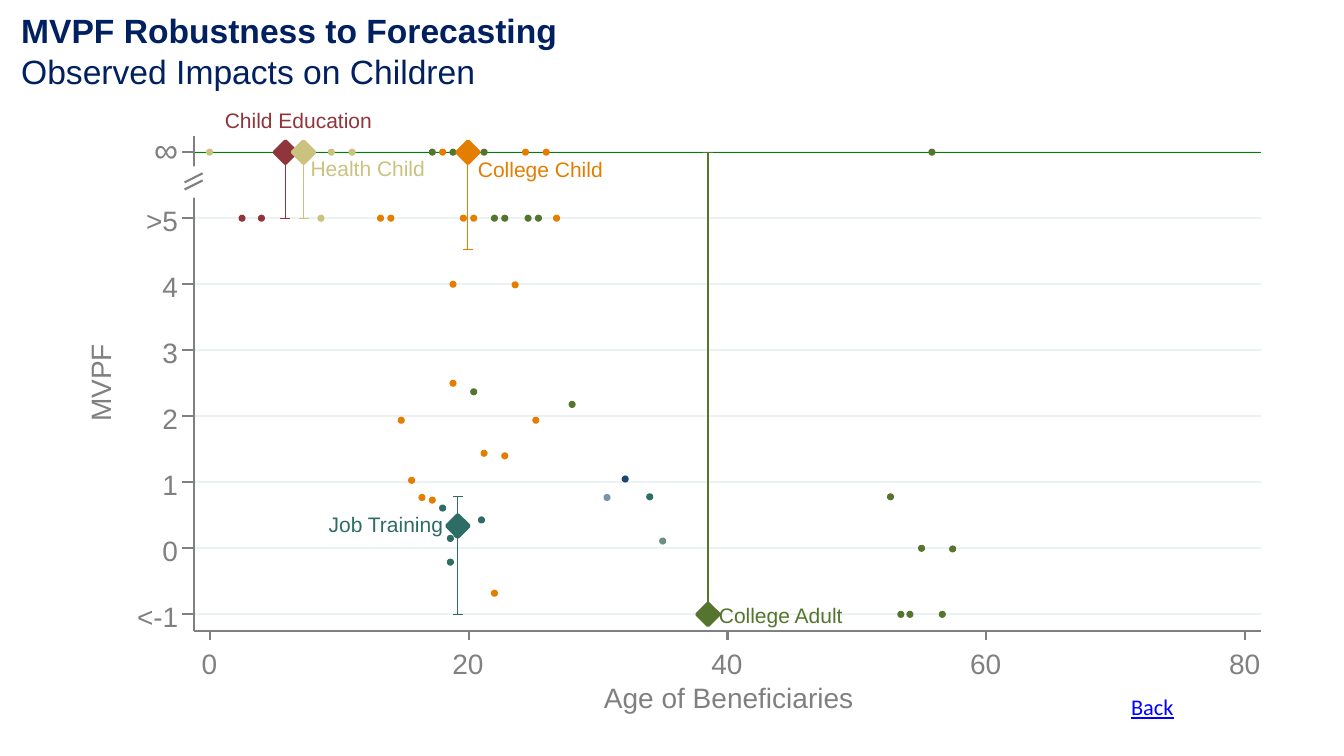
from dataclasses import dataclass

from lxml import etree
from pptx import Presentation
from pptx.dml.color import RGBColor
from pptx.enum.shapes import MSO_CONNECTOR, MSO_SHAPE
from pptx.oxml.ns import qn
from pptx.util import Inches, Pt


@dataclass(frozen=True)
class Theme:
    font: str = "Arial"
    link_font: str = "Calibri"
    title: str = "002060"
    link: str = "0000FF"
    axis: str = "808080"
    grid: str = "EAF2F3"
    infinite: str = "008000"
    paper: str = "FFFFFF"
    child_education: str = "90353B"
    college_adult: str = "55752F"
    college_child: str = "E37E00"
    health_child: str = "CAC27E"
    job_training: str = "2D6D66"
    sage: str = "6E8E84"
    steel: str = "7B92A8"
    navy: str = "1A476F"
    title_size: int = 24
    axis_size: int = 20
    link_size: int = 16
    label_size: int = 15


THEME = Theme()
LEFT, RIGHT, TOP, BOTTOM = 1.92, 12.51, 1.35, 6.26
INF = 6  # the infinite MVPF sits one step above >5
DOT = 0.06

# Programs as (age, MVPF), by colour
PROGRAMS = {
    THEME.sage: [(35, 0.11)],
    THEME.child_education: [(2.5, 5), (4, 5)],
    THEME.college_adult: [
        (17.2, INF), (18.8, INF), (20.4, 2.37), (21.2, INF), (22, 5), (22.8, 5),
        (24.6, 5), (25.4, 5), (28, 2.18), (52.6, 0.78), (53.4, -1), (54.1, -1),
        (55, 0), (55.8, INF), (56.6, -1), (57.4, -0.01)],
    THEME.college_child: [
        (18.8, 2.5), (13.2, 5), (14, 5), (14.8, 1.94), (15.6, 1.03), (16.4, 0.77),
        (17.2, 0.73), (18, INF), (18.8, 4), (19.6, 5), (20.4, 5), (21.2, 1.44),
        (22, -0.68), (22.8, 1.4), (23.6, 3.99), (24.4, INF), (25.2, 1.94),
        (26, INF), (26.8, 5)],
    THEME.health_child: [(0, INF), (8.6, 5), (9.4, INF), (11, INF)],
    THEME.steel: [(30.7, 0.77)],
    THEME.job_training: [(18, 0.61), (18.6, 0.15), (18.6, -0.21), (19.1, 0.21),
                         (21, 0.43), (34, 0.78)],
    THEME.navy: [(32.1, 1.05)],
}

# Label, colour, age, MVPF, interval low and high, label left, top and width
GROUPS = [
    ("Child Education", THEME.child_education, 5.85, INF, 5, INF, 2.23, 1.07, 1.62),
    ("College Adult", THEME.college_adult, 38.5, -1, -1, INF, 7.13, 5.98, 1.4),
    ("College Child", THEME.college_child, 19.95, INF, 4.52, INF, 4.74, 1.55, 1.4),
    ("Health Child", THEME.health_child, 7.25, INF, 5, INF, 3.08, 1.54, 1.28),
    ("Job Training", THEME.job_training, 19.17, 0.34, -1, 0.78, 3.26, 5.07, 1.3),
]


def age_x(age):
    return 2.08 + age * 10.27 / 80


def mvpf_y(mvpf):
    return 5.44 - mvpf * 0.655


def add_line(s, x1, y1, x2, y2, color, width):
    line = s.shapes.add_connector(MSO_CONNECTOR.STRAIGHT, Inches(x1), Inches(y1),
                                  Inches(x2), Inches(y2))
    line.line.color.rgb = RGBColor.from_string(color)
    line.line.width = Pt(width)
    etree.SubElement(line._element.spPr, qn("a:effectLst"))


def paint(sp, color, width):
    sp.shadow.inherit = False
    sp.fill.solid()
    sp.fill.fore_color.rgb = RGBColor.from_string(color)
    sp.line.color.rgb = RGBColor.from_string(color)
    sp.line.width = Pt(width)


def add_text(s, text, x, y, w, h, size, color, font=THEME.font, inset=0, wrap=False):
    sp = s.shapes.add_textbox(Inches(x), Inches(y), Inches(w), Inches(h))
    tf = sp.text_frame
    tf.word_wrap = wrap
    if not inset:
        tf.margin_left = tf.margin_right = tf.margin_top = tf.margin_bottom = 0
    tf.text = text
    for p in tf.paragraphs:
        for r in p.runs:
            r.font.name = font
            r.font.size = Pt(size)
            r.font.color.rgb = RGBColor.from_string(color)
    return sp


def add_axis_text(s, text, x, y, w):
    return add_text(s, text, x, y, w, 0.39, THEME.axis_size, THEME.axis)


def add_dot(s, age, mvpf, color):
    sp = s.shapes.add_shape(MSO_SHAPE.OVAL, Inches(age_x(age) - DOT / 2),
                            Inches(mvpf_y(mvpf) - DOT / 2), Inches(DOT), Inches(DOT))
    paint(sp, color, 0)


def add_interval(s, age, low, high, color):
    """Vertical range line with a cap at each end."""
    x = age_x(age)
    add_line(s, x, mvpf_y(low), x, mvpf_y(high), color, 0.75)
    for end in (high, low):
        add_line(s, x - 0.05, mvpf_y(end), x + 0.05, mvpf_y(end), color, 0.75)


def add_diamond(s, age, mvpf, color):
    x, y, reach = age_x(age), mvpf_y(mvpf), 0.11
    corners = [(x - reach, y), (x, y + reach), (x + reach, y)]
    builder = s.shapes.build_freeform(Inches(x), Inches(y - reach), scale=1.0)
    builder.add_line_segments([(Inches(a), Inches(b)) for a, b in corners], close=True)
    paint(builder.convert_to_shape(), color, 2.5)


def add_grid(s):
    for mvpf in range(-1, INF + 1):
        add_line(s, LEFT, mvpf_y(mvpf), RIGHT, mvpf_y(mvpf), THEME.grid, 1.5)
    add_line(s, LEFT, mvpf_y(INF), RIGHT, mvpf_y(INF), THEME.infinite, 0.75)


def add_mvpf_axis(s):
    add_line(s, LEFT, BOTTOM, LEFT, TOP, THEME.axis, 1.5)
    ends = {-1: ("<-1", 1.36, 0.54), 5: (">5", 1.45, 0.44)}
    for mvpf in range(-1, INF + 1):
        y = mvpf_y(mvpf)
        add_line(s, LEFT, y, LEFT - 0.11, y, THEME.axis, 1.5)
        if mvpf < INF:
            text, x, w = ends.get(mvpf, (str(mvpf), 1.61, 0.28))
            add_axis_text(s, text, x, y - 0.15, w)
    add_axis_text(s, "MVPF", 0.57, 3.54, 0.9).rotation = 270


def add_age_axis(s):
    add_line(s, LEFT, BOTTOM, RIGHT, BOTTOM, THEME.axis, 1.5)
    for age in range(0, 81, 20):
        x = age_x(age)
        add_line(s, x, BOTTOM, x, BOTTOM + 0.09, THEME.axis, 1.5)
        digits = len(str(age))
        add_axis_text(s, str(age), x - 0.08 * digits, 6.41, 0.12 + 0.16 * digits)
    add_axis_text(s, "Age of Beneficiaries", 5.99, 6.75, 2.62)


def add_axis_break(s):
    sp = s.shapes.add_shape(MSO_SHAPE.RECTANGLE, Inches(1.61), Inches(1.65),
                            Inches(0.58), Inches(0.31))
    paint(sp, THEME.paper, 0)
    sp.line.fill.background()
    for y in (1.81, 1.88):
        add_line(s, LEFT - 0.09, y, LEFT + 0.09, y - 0.09, THEME.axis, 1.5)
    add_text(s, "∞", 1.53, 1.28, 0.24, 0.4, THEME.title_size, THEME.axis)


def main():
    prs = Presentation()
    prs.slide_width, prs.slide_height = Inches(13.33), Inches(7.5)
    s = prs.slides.add_slide(prs.slide_layouts[6])

    add_grid(s)
    for color, points in PROGRAMS.items():
        for age, mvpf in points:
            add_dot(s, age, mvpf, color)
    for _, color, age, _, low, high, *_ in GROUPS:
        add_interval(s, age, low, high, color)
    for label, color, age, mvpf, _, _, x, y, w in GROUPS:
        add_diamond(s, age, mvpf, color)
        add_text(s, label, x, y, w, 0.3, THEME.label_size, color)
    add_mvpf_axis(s)
    add_age_axis(s)

    title = add_text(s, "MVPF Robustness to Forecasting\nObserved Impacts on Children",
                     0.21, 0.1, 11.62, 0.81, THEME.title_size, THEME.title, wrap=True)
    title.text_frame.paragraphs[0].runs[0].font.bold = True
    add_axis_break(s)
    back = add_text(s, "Back", 11.12, 6.83, 2.78, 0.37, THEME.link_size, THEME.link,
                    font=THEME.link_font, inset=True, wrap=True)
    back.text_frame.paragraphs[0].runs[0].font.underline = True
    prs.save("out.pptx")


if __name__ == "__main__":
    main()
